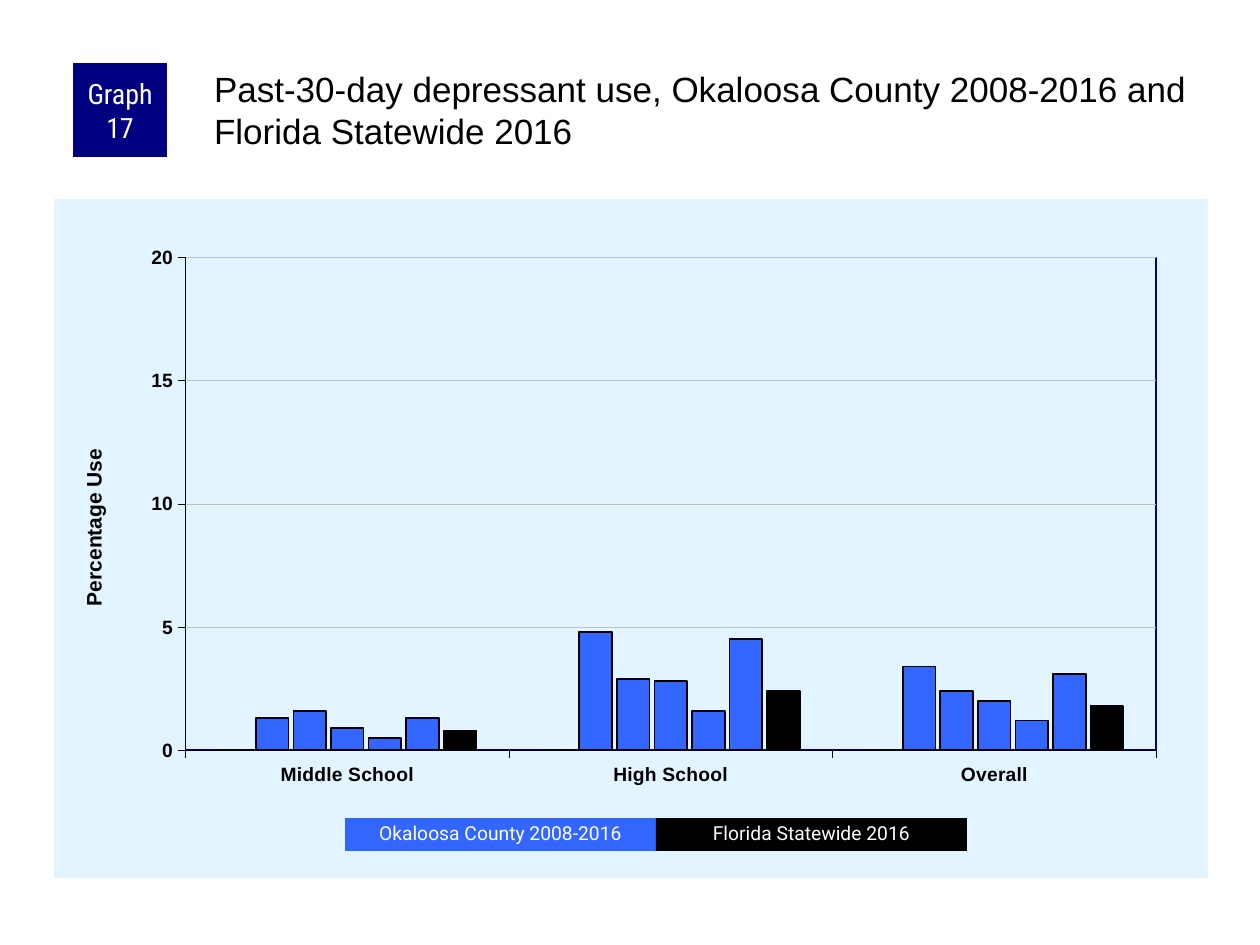
from lxml import etree
from pptx import Presentation
from pptx.chart.data import CategoryChartData
from pptx.dml.color import RGBColor
from pptx.enum.chart import XL_CHART_TYPE, XL_TICK_MARK
from pptx.enum.shapes import MSO_SHAPE
from pptx.enum.text import MSO_ANCHOR, MSO_AUTO_SIZE, PP_ALIGN
from pptx.oxml import parse_xml
from pptx.oxml.ns import nsdecls, qn
from pptx.util import Pt

COLUMN_CLUSTERED = XL_CHART_TYPE.COLUMN_CLUSTERED
TICK_OUTSIDE = XL_TICK_MARK.OUTSIDE
RECTANGLE = MSO_SHAPE.RECTANGLE
MIDDLE, TOP = MSO_ANCHOR.MIDDLE, MSO_ANCHOR.TOP
CENTER, LEFT = PP_ALIGN.CENTER, PP_ALIGN.LEFT
NO_AUTOFIT = MSO_AUTO_SIZE.NONE

EMU_PER_PX = 914400 / 126
COLORS = {
    "navy": "000080",
    "county": "3366FF",
    "state": "000000",
    "text": "000000",
    "white": "FFFFFF",
    "panel": "E1F4FF",
    "grid": "C0C0C0",
}
CATEGORIES = ["Middle School", "High School", "Overall"]
SERIES = [
    (0, 0, 0),
    (1.3, 4.8, 3.4),
    (1.6, 2.9, 2.4),
    (0.9, 2.8, 2),
    (0.5, 1.6, 1.2),
    (1.3, 4.5, 3.1),
    (0.8, 2.4, 1.8),
]
LEGEND = [("Okaloosa County 2008-2016", "county"), ("Florida Statewide 2016", "state")]


def px(length):
    return round(length * EMU_PER_PX)


def color(name):
    return RGBColor.from_string(COLORS[name])


def style_font(font, name, size, color_name, bold=False):
    font.name, font.size, font.bold = name, Pt(size), bold
    font.color.rgb = color(color_name)


def style_line(line, color_name, width):
    line.color.rgb = color(color_name)
    line.width = Pt(width)


def set_insets(frame, left, top, right, bottom):
    frame.margin_left, frame.margin_top = px(left), px(top)
    frame.margin_right, frame.margin_bottom = px(right), px(bottom)


def add_label_box(slide, box, fill, text, font_name, size, line_spacing=1.0):
    shape = slide.shapes.add_shape(RECTANGLE, *map(px, box))
    shape.shadow.inherit = False
    shape.fill.solid()
    shape.fill.fore_color.rgb = color(fill)
    shape.line.fill.background()
    frame = shape.text_frame
    frame.word_wrap = True
    frame.vertical_anchor = MIDDLE
    set_insets(frame, 6, 0, 6, 0)
    paragraph = frame.paragraphs[0]
    paragraph.alignment = CENTER
    paragraph.line_spacing = line_spacing
    run = paragraph.add_run()
    run.text = text
    style_font(run.font, font_name, size, "white")


def add_header(slide, left, top):
    """Place the graph number and, to its right, the slide title."""
    add_label_box(slide, (left, top, 94, 94), "navy", "Graph 17", "Roboto Condensed", 16)
    title = slide.shapes.title
    title.left, title.top = px(left + 137), px(top)
    title.width, title.height = px(998), px(105)
    frame = title.text_frame
    frame.word_wrap = True
    frame.auto_size = NO_AUTOFIT
    frame.vertical_anchor = TOP
    set_insets(frame, 4, 4, 0, 0)
    paragraph = frame.paragraphs[0]
    paragraph.alignment = LEFT
    run = paragraph.add_run()
    run.text = "Past-30-day depressant use, Okaloosa County 2008-2016 and Florida Statewide 2016"
    style_font(run.font, "Arial", 20, "text")


def set_layout(parent, index, target=None, **fractions):
    """Fix the place of a chart part as fractions of the chart area."""
    for old in parent.findall(qn("c:layout")):
        parent.remove(old)
    layout = etree.Element(qn("c:layout"))
    manual = etree.SubElement(layout, qn("c:manualLayout"))
    if target:
        etree.SubElement(manual, qn("c:layoutTarget")).set("val", target)
    for mode in ("xMode", "yMode"):
        etree.SubElement(manual, qn(f"c:{mode}")).set("val", "edge")
    for key, value in fractions.items():
        etree.SubElement(manual, qn(f"c:{key}")).set("val", str(value))
    parent.insert(index, layout)


def area_properties(fill, line):
    return parse_xml(f"<c:spPr {nsdecls('c', 'a')}>{fill}<a:ln w='12700'>{line}</a:ln></c:spPr>")


def solid_fill(color_name):
    return f"<a:solidFill><a:srgbClr val='{COLORS[color_name]}'/></a:solidFill>"


def style_areas(chart):
    """Tint the chart panel and frame the plot."""
    chart_element = chart.element.find(qn("c:chart"))
    chart_element.addnext(area_properties(solid_fill("panel"), "<a:noFill/>"))
    plot_area = chart_element.find(qn("c:plotArea"))
    set_layout(plot_area, 0, "inner", x=0.114, y=0.086, w=0.841, h=0.726)
    plot_area.append(area_properties("<a:noFill/>", solid_fill("navy")))


def style_axes(chart):
    for axis in (chart.category_axis, chart.value_axis):
        axis.major_tick_mark = TICK_OUTSIDE
        style_font(axis.tick_labels.font, "Arial", 11, "text", bold=True)
        style_line(axis.format.line, "text", 0.25)
    axis = chart.value_axis
    axis.minimum_scale, axis.maximum_scale, axis.major_unit = 0, 20, 5
    axis.has_major_gridlines = True
    style_line(axis.major_gridlines.format.line, "grid", 0.25)
    axis.tick_labels.number_format = "0"
    axis.tick_labels.number_format_is_linked = False

    frame = axis.axis_title.text_frame
    run = frame.paragraphs[0].add_run()
    run.text = "Percentage Use"
    style_font(run.font, "Arial", 12, "text", bold=True)
    body = axis.axis_title.element.find(".//" + qn("a:bodyPr"))
    body.set("rot", "-5400000")
    body.set("vert", "horz")
    set_layout(axis.axis_title.element, 1, x=0.02, y=0.362)


def add_usage_chart(slide, box):
    data = CategoryChartData()
    data.categories = CATEGORIES
    for number, values in enumerate(SERIES, 1):
        data.add_series(f"Series {number}", values)
    chart = slide.shapes.add_chart(COLUMN_CLUSTERED, *map(px, box), data).chart
    chart.has_title = False
    chart.has_legend = False
    style_font(chart.font, "Arial", 8, "text")
    plot = chart.plots[0]
    plot.gap_width, plot.overlap = 200, -15
    plot.vary_by_categories = False
    for series in plot.series:
        is_state = series.name == f"Series {len(SERIES)}"
        series.format.fill.solid()
        series.format.fill.fore_color.rgb = color("state" if is_state else "county")
        series.invert_if_negative = False
        style_line(series.format.line, "text", 1)
    style_areas(chart)
    style_axes(chart)


def add_legend(slide, left, top, width, height):
    key_width = width // len(LEGEND)
    for index, (text, fill) in enumerate(LEGEND):
        box = (left + index * key_width, top, key_width, height)
        add_label_box(slide, box, fill, text, "Roboto", 11, 0.9)


def main():
    presentation = Presentation()
    presentation.slide_width, presentation.slide_height = px(1260), px(945)
    slide = presentation.slides.add_slide(presentation.slide_layouts[5])
    add_usage_chart(slide, (54, 199, 1154, 679))
    add_header(slide, 73, 63)
    add_legend(slide, 345, 818, 622, 33)
    presentation.save("out.pptx")


if __name__ == "__main__":
    main()
